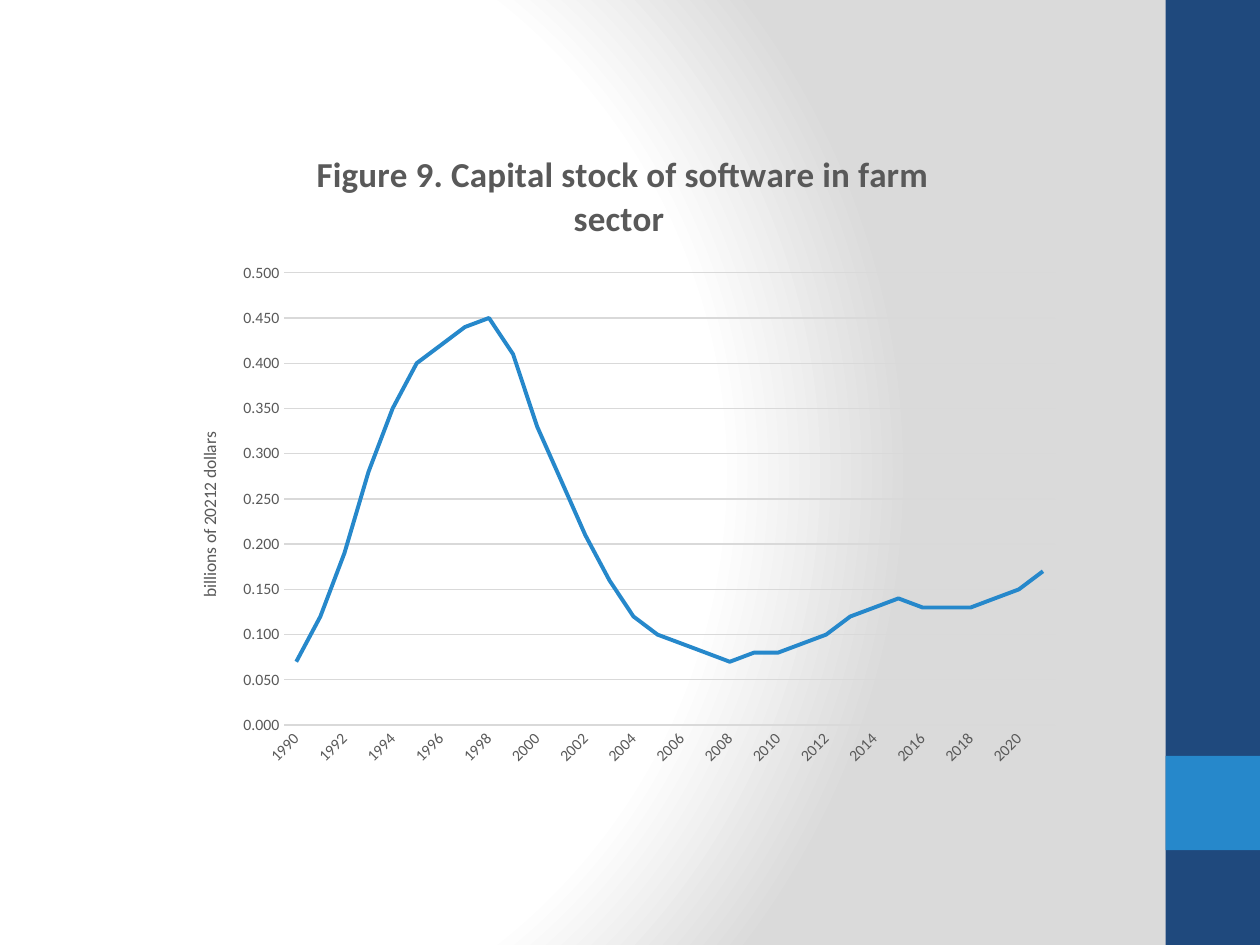
from lxml import etree
from pptx import Presentation
from pptx.chart.data import CategoryChartData
from pptx.dml.color import RGBColor
from pptx.enum.chart import XL_CHART_TYPE, XL_TICK_MARK
from pptx.enum.shapes import MSO_SHAPE
from pptx.oxml import parse_xml
from pptx.oxml.ns import nsdecls, qn
from pptx.util import Cm, Pt

NAVY = RGBColor(0x1F, 0x49, 0x7D)
BLUE = RGBColor(0x26, 0x88, 0xCB)
GREY_TEXT = RGBColor(0x59, 0x59, 0x59)
GREY_LINE = RGBColor(0xD9, 0xD9, 0xD9)
WHITE = RGBColor(0xFF, 0xFF, 0xFF)
GREY_BACK = RGBColor(0xDA, 0xDA, 0xDA)

FIRST_YEAR = 1990
SOFTWARE_STOCK = [
    0.07, 0.12, 0.19, 0.28, 0.35, 0.40, 0.42, 0.44,
    0.45, 0.41, 0.33, 0.27, 0.21, 0.16, 0.12, 0.10,
    0.09, 0.08, 0.07, 0.08, 0.08, 0.09, 0.10, 0.12,
    0.13, 0.14, 0.13, 0.13, 0.13, 0.14, 0.15, 0.17,
]


class SlideBuilder:
    def __init__(self, page, font_name):
        self.page = page
        self.font_name = font_name

    def style_font(self, font, size, bold=False):
        font.name = self.font_name
        font.size = Pt(size)
        font.bold = bold
        font.color.rgb = GREY_TEXT

    def radial_background(self, stops):
        self.page.background.fill.solid()
        solid = self.page.element.xpath(".//p:bgPr/a:solidFill")[0]
        stop_xml = "".join(
            f'<a:gs pos="{percent * 1000}"><a:srgbClr val="{color}"/></a:gs>'
            for percent, color in stops
        )
        gradient = parse_xml(
            f'<a:gradFill {nsdecls("a")} rotWithShape="1"><a:gsLst>{stop_xml}</a:gsLst>'
            '<a:path path="circle"><a:fillToRect l="20000" t="50000" r="100000" b="50000"/>'
            "</a:path></a:gradFill>"
        )
        solid.getparent().replace(solid, gradient)

    def rectangle(self, left, top, width, height, color):
        box = self.page.shapes.add_shape(
            MSO_SHAPE.RECTANGLE, Cm(left), Cm(top), Cm(width), Cm(height)
        )
        box.shadow.inherit = False
        box.fill.solid()
        box.fill.fore_color.rgb = color
        box.line.fill.background()

    def title_text(self, owner, text, size, bold=False):
        """Put a title on a chart or on an axis."""
        para = owner.text_frame.paragraphs[0]
        para.text = text
        self.style_font(para.font, size, bold)

    def line_chart(self, left, top, width, height, data, title, value_title):
        chart = self.page.shapes.add_chart(
            XL_CHART_TYPE.LINE, Cm(left), Cm(top), Cm(width), Cm(height), data
        ).chart
        self.style_font(chart.font, 10)
        chart.has_legend = False
        self.title_text(chart.chart_title, title, 20, bold=True)
        chart.chart_title.include_in_layout = False
        self.place_plot(
            chart, x=2.25 / width, y=3.01 / height, w=15.54 / width, h=9.12 / height
        )

        line = chart.plots[0].series[0]
        line.smooth = False
        line.format.line.color.rgb = BLUE
        line.format.line.width = Pt(2.25)

        years, values = chart.category_axis, chart.value_axis
        for axis in (years, values):
            axis.major_tick_mark = axis.minor_tick_mark = XL_TICK_MARK.NONE
            self.style_font(axis.tick_labels.font, 9)
        self.grey_line(years.format.line)
        years._element.find(qn("c:txPr")).find(qn("a:bodyPr")).set("rot", "-2700000")
        label_skip = etree.Element(qn("c:tickLblSkip"), val="2")
        years._element.find(qn("c:noMultiLvlLbl")).addprevious(label_skip)

        values.minimum_scale, values.maximum_scale, values.major_unit = 0, 0.5, 0.05
        values.tick_labels.number_format = "###,###,##0.000"
        values.tick_labels.number_format_is_linked = False
        values.format.line.fill.background()
        self.grey_line(values.major_gridlines.format.line)
        self.title_text(values.axis_title, value_title, 10)

    def grey_line(self, line):
        line.color.rgb = GREY_LINE
        line.width = Pt(0.75)

    def place_plot(self, chart, **fractions):
        """Fix the inner plot area, in fractions of the chart."""
        plot_area = chart._chartSpace.chart.plotArea
        for old in plot_area.findall(qn("c:layout")):
            plot_area.remove(old)
        places = "".join(f'<c:{key} val="{value}"/>' for key, value in fractions.items())
        plot_area.insert(0, parse_xml(
            f'<c:layout {nsdecls("c")}><c:manualLayout><c:layoutTarget val="inner"/>'
            f'<c:xMode val="edge"/><c:yMode val="edge"/>{places}</c:manualLayout></c:layout>'
        ))


def main():
    deck = Presentation()
    deck.slide_width, deck.slide_height = Cm(25.4), Cm(19.05)
    blank_layout = deck.slide_layouts[6]
    builder = SlideBuilder(deck.slides.add_slide(blank_layout), "Calibri")

    builder.radial_background([(0, WHITE), (75, WHITE), (100, GREY_BACK)])
    builder.rectangle(23.5, 0, 1.9, 19.05, NAVY)
    builder.rectangle(23.5, 15.24, 1.9, 1.9, BLUE)

    data = CategoryChartData()
    data.categories = [str(FIRST_YEAR + i) for i in range(len(SOFTWARE_STOCK))]
    data.add_series("Series 1", SOFTWARE_STOCK)
    builder.line_chart(
        3.48, 2.49, 18.16, 13.23, data,
        title="Figure 9. Capital stock of software in farm sector ",
        value_title="billions of 20212 dollars",
    )
    deck.save("out.pptx")


if __name__ == "__main__":
    main()
